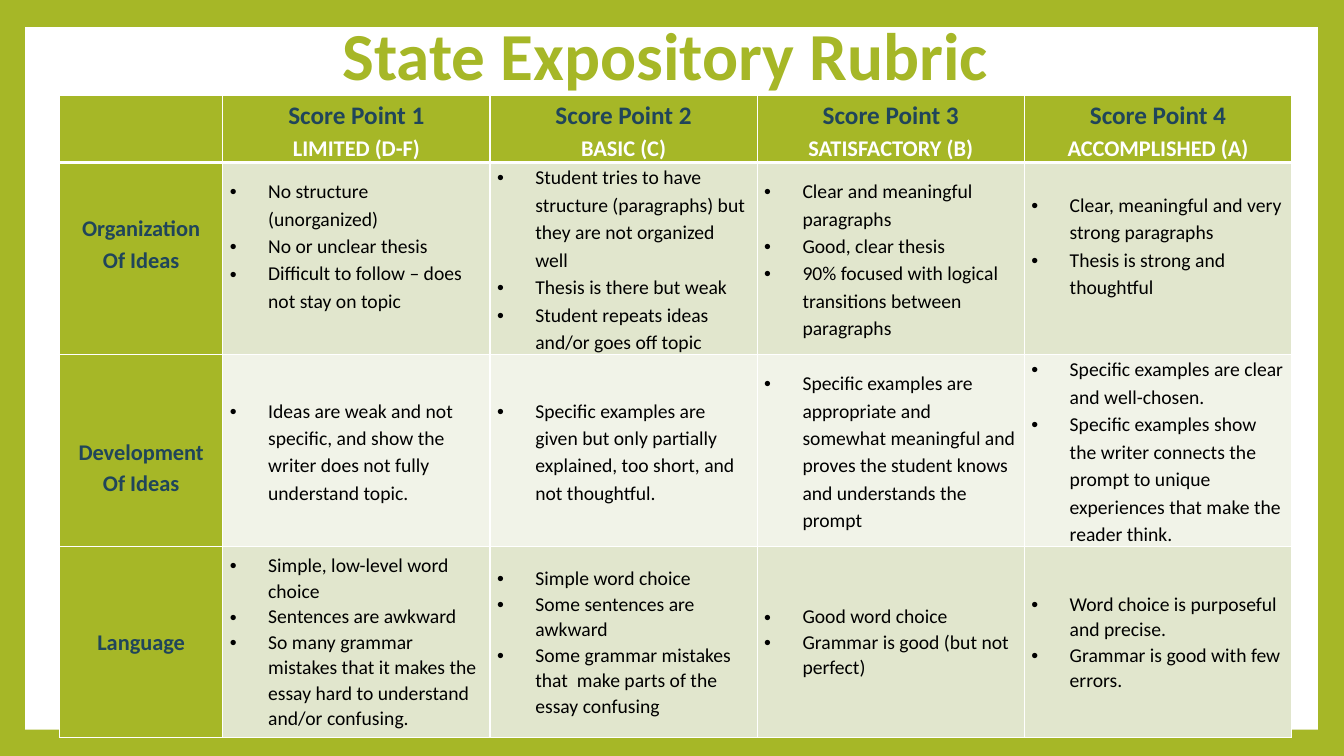
from pptx import Presentation
from pptx.dml.color import RGBColor
from pptx.enum.shapes import MSO_SHAPE
from pptx.enum.text import MSO_ANCHOR, PP_ALIGN
from pptx.oxml.ns import qn
from pptx.util import Inches, Pt
from lxml.etree import SubElement, Element

TITLE = "State Expository Rubric"
SCORES = [
    ("Score Point 1", "LIMITED (D-F)"),
    ("Score Point 2", "BASIC (C)"),
    ("Score Point 3", "SATISFACTORY (B)"),
    ("Score Point 4", "ACCOMPLISHED (A)"),
]
CRITERIA = [
    (["Organization", "Of Ideas"], [
        ["No structure (unorganized)", "No or unclear thesis",
         "Difficult to follow – does not stay on topic"],
        ["Student tries to have structure (paragraphs) but they are not organized well",
         "Thesis is there but weak",
         "Student repeats ideas and/or goes off topic"],
        ["Clear and meaningful paragraphs", "Good, clear thesis",
         "90% focused with logical transitions between paragraphs"],
        ["Clear, meaningful and very strong paragraphs",
         "Thesis is strong and thoughtful"],
    ]),
    (["Development", "Of Ideas"], [
        ["Ideas are weak and not specific, and show the writer does not fully "
         "understand topic."],
        ["Specific examples are given but only partially explained, too short, "
         "and not thoughtful."],
        ["Specific examples are appropriate and somewhat meaningful and proves "
         "the student knows and understands the prompt"],
        ["Specific examples are clear and well-chosen.",
         "Specific examples show the writer connects the prompt to unique "
         "experiences that make the reader think."],
    ]),
    (["Language"], [
        ["Simple, low-level word choice", "Sentences are awkward",
         "So many grammar mistakes that it makes the essay hard to understand "
         "and/or confusing."],
        ["Simple word choice", "Some sentences are awkward",
         "Some grammar mistakes that  make parts of the essay confusing"],
        ["Good word choice", "Grammar is good (but not perfect)"],
        ["Word choice is purposeful and precise.", "Grammar is good with few errors."],
    ]),
]

COLORS = {"green": "A6B727", "navy": "20455A", "white": "FFFFFF", "black": "000000",
          "band": "E1E6CD", "pale": "F1F3E8"}
FONT = "Calibri"
COL_W = [1.62] + [2.65] * 4
ROW_H = [0.54, 1.64, 1.64, 1.89]
ROW_FILLS = ["band", "pale", "band"]
ROW_SPACING = [1.15, 1.15, 1.07]
# Extra cell margins that lift or lower text, by (row, column)
OFFSETS = {(1, 0): {"margin_bottom": 0.31}, (1, 1): {"margin_bottom": 0.27},
           (1, 4): {"margin_bottom": 0.27}, (2, 0): {"margin_top": 0.31}}

HEAD = {"size": Pt(18), "bold": True, "color": "navy"}
GRADE = {"size": Pt(16), "bold": True, "color": "white"}
LABEL = {"size": Pt(16), "bold": True, "color": "navy"}
BODY = {"size": Pt(14), "bold": False, "color": "black"}
HEADING = {"size": Pt(48), "bold": True, "color": "green"}


def rgb(name):
    return RGBColor.from_string(COLORS[name])


def write(p, text, fmt, spacing, align=PP_ALIGN.CENTER):
    r = p.add_run()
    r.text = text
    r.font.name = FONT
    r.font.color.rgb = rgb(fmt["color"])
    for name in ("size", "bold"):
        setattr(r.font, name, fmt[name])
    p.line_spacing = spacing
    p.alignment = align


def add_bullet(p):
    pPr = p._p.get_or_add_pPr()
    pPr.set("marL", str(Inches(0.38)))
    pPr.set("indent", str(-Inches(0.38)))
    SubElement(pPr, qn("a:buFont")).set("typeface", "Arial")
    SubElement(pPr, qn("a:buChar")).set("char", "•")


def set_borders(cell, bottom):
    tcPr = cell._tc.get_or_add_tcPr()
    widths = {"L": 1, "R": 1, "T": 1, "B": bottom}
    for i, (side, width) in enumerate(widths.items()):
        ln = Element(qn(f"a:ln{side}"))
        ln.set("w", str(Pt(width)))
        fill = SubElement(ln, qn("a:solidFill"))
        SubElement(fill, qn("a:srgbClr")).set("val", COLORS["white"])
        tcPr.insert(i, ln)


def fill_cell(table, row, col, lines, fill, spacing, bullets=False):
    """Write (text, format) lines into one cell and style the cell."""
    cell = table.cell(row, col)
    margins = {"margin_left": 0.07, "margin_right": 0.07,
               "margin_top": 0, "margin_bottom": 0} | OFFSETS.get((row, col), {})
    for name, value in margins.items():
        setattr(cell, name, Inches(value))
    cell.vertical_anchor = MSO_ANCHOR.MIDDLE if row else MSO_ANCHOR.TOP
    cell.fill.solid()
    cell.fill.fore_color.rgb = rgb(fill)
    set_borders(cell, 1 if row else 3)
    tf = cell.text_frame
    for i, (text, fmt) in enumerate(lines):
        p = tf.add_paragraph() if i else tf.paragraphs[0]
        write(p, text, fmt, spacing, PP_ALIGN.LEFT if bullets else PP_ALIGN.CENTER)
        if bullets:
            add_bullet(p)


def add_rubric(s):
    frame = s.shapes.add_table(len(ROW_H), len(COL_W), Inches(0.59), Inches(0.95),
                               Inches(sum(COL_W)), Inches(sum(ROW_H)))
    table = frame.table
    table.horz_banding = False
    for column, width in zip(table.columns, COL_W):
        column.width = Inches(width)
    for row, height in zip(table.rows, ROW_H):
        row.height = Inches(height)

    fill_cell(table, 0, 0, [], "green", 1.15)
    for col, (score, grade) in enumerate(SCORES, 1):
        fill_cell(table, 0, col, [(score, HEAD), (grade, GRADE)], "green", 1.15)
    rows = zip(CRITERIA, ROW_FILLS, ROW_SPACING)
    for row, ((label, levels), fill, spacing) in enumerate(rows, 1):
        fill_cell(table, row, 0, [(text, LABEL) for text in label], "green", spacing)
        for col, points in enumerate(levels, 1):
            fill_cell(table, row, col, [(text, BODY) for text in points],
                      fill, spacing, bullets=True)


def main():
    prs = Presentation()
    prs.slide_width, prs.slide_height = Inches(13.33), Inches(7.5)
    s = prs.slides.add_slide(prs.slide_layouts[5])
    s.background.fill.solid()
    s.background.fill.fore_color.rgb = rgb("green")

    panel = s.shapes.add_shape(MSO_SHAPE.RECTANGLE, Inches(0.25), Inches(0.27),
                               Inches(12.82), Inches(6.97))
    panel.shadow.inherit = False
    panel.fill.solid()
    panel.fill.fore_color.rgb = rgb("white")
    panel.line.fill.background()

    add_rubric(s)

    title = s.shapes.title
    box = {"left": 1.2, "top": 0, "width": 10.8, "height": 1.16}
    for name, value in box.items():
        setattr(title, name, Inches(value))
    title.text_frame.vertical_anchor = MSO_ANCHOR.MIDDLE
    write(title.text_frame.paragraphs[0], TITLE, HEADING, 0.9)
    s.shapes._spTree.append(title._element)  # bring the title to the front

    prs.save("out.pptx")


if __name__ == "__main__":
    main()
